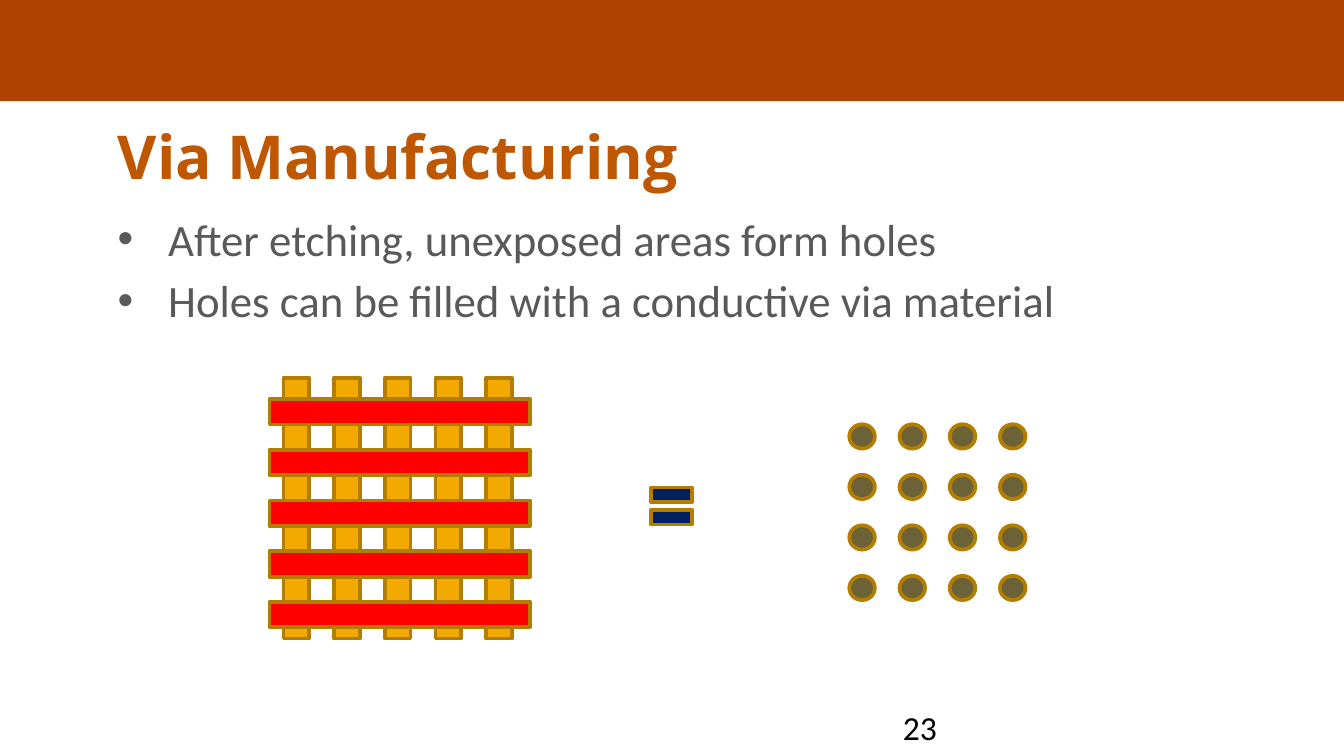
import pptx
import pptx.util
import pptx.dml.color
import pptx.enum.shapes
import pptx.enum.text
import pptx.oxml
import pptx.oxml.ns

Pt = pptx.util.Pt
SHAPE = pptx.enum.shapes.MSO_SHAPE
PITCH = 27.15
BAR = 13.7
OUTLINE = "B37D00"


def rgb(value):
    return pptx.dml.color.RGBColor.from_string(value)


def add_shape(s, kind, box, fill, line=None):
    sp = s.shapes.add_shape(kind, *map(Pt, box))
    sp.shadow.inherit = False
    sp.fill.solid()
    sp.fill.fore_color.rgb = rgb(fill)
    if line:
        sp.line.color.rgb = rgb(line)
        sp.line.width = Pt(2)
    else:
        sp.line.fill.background()
    return sp


def place(sp, box):
    sp.left, sp.top, sp.width, sp.height = map(Pt, box)


def format_text(sp, size, font, color, bold=False):
    tf = sp.text_frame
    tf.word_wrap = True
    tf.auto_size = pptx.enum.text.MSO_AUTO_SIZE.NONE
    tf.vertical_anchor = pptx.enum.text.MSO_ANCHOR.TOP
    for p in tf.paragraphs:
        p.alignment = pptx.enum.text.PP_ALIGN.LEFT
        for r in p.runs:
            r.font.size = Pt(size)
            r.font.name = font
            r.font.bold = bold
            r.font.color.rgb = rgb(color)


def add_title(s, box, text):
    sp = s.shapes.title
    place(sp, box)
    sp.text_frame.text = text
    sp.text_frame.margin_top = Pt(1.3)
    format_text(sp, 32.4, "Open Sans", "BF5700", True)


def add_bullets(s, box, lines):
    sp = s.shapes.add_textbox(*map(Pt, box))
    sp.text_frame.text = "\n".join(lines)
    ns = pptx.oxml.ns.nsdecls("a")
    for i, p in enumerate(sp.text_frame.paragraphs):
        pPr = p._p.get_or_add_pPr()
        pPr.set("marL", str(Pt(27)))
        pPr.set("indent", str(-Pt(27)))
        for xml in (f'<a:buClr {ns}><a:srgbClr val="595A5B"/></a:buClr>',
                    f'<a:buFont {ns} typeface="Arial"/>',
                    f'<a:buChar {ns} char="•"/>'):
            pPr.append(pptx.oxml.parse_xml(xml))
        if i:
            p.space_before = Pt(4)
    format_text(sp, 24, "Calibri", "595959")


def add_mesh(s, box, count=5):
    left, top, width, height = box
    for i in range(count):
        add_shape(s, SHAPE.RECTANGLE,
                  (left + 7.5 + i * PITCH, top, BAR, height), "F2A900", OUTLINE)
    for i in range(count):
        add_shape(s, SHAPE.RECTANGLE,
                  (left, top + 11.4 + i * PITCH, width, BAR), "FF0000", OUTLINE)


def add_vias(s, box, count=4):
    left, top, width, height = box
    dot_w, dot_h = 13.7, 13
    step_x = (width - dot_w) / (count - 1)
    step_y = (height - dot_h) / (count - 1)
    for row in range(count):
        for col in range(count):
            add_shape(s, SHAPE.OVAL,
                      (left + col * step_x, top + row * step_y, dot_w, dot_h),
                      "6C6238", OUTLINE)


def add_page_number(s, box, number):
    sp = s.shapes.add_textbox(*map(Pt, box))
    sp.text_frame.text = str(number)
    format_text(sp, 18, "Calibri", "000000")


def main():
    prs = pptx.Presentation()
    prs.slide_width, prs.slide_height = Pt(720), Pt(405)
    s = prs.slides.add_slide(prs.slide_layouts[5])
    add_shape(s, SHAPE.RECTANGLE, (0, -0.5, 720, 54.7), "B04304")
    add_title(s, (56, 62.6, 610, 41), "Via Manufacturing")
    add_bullets(s, (56, 109.8, 609, 270.7),
                ["After etching, unexposed areas form holes",
                 "Holes can be filled with a conductive via material"])
    add_mesh(s, (144.4, 202.4, 139.7, 139.7))
    add_shape(s, SHAPE.MATH_EQUAL, (345, 254.2, 29.5, 33.8), "002060", OUTLINE)
    add_vias(s, (455, 227.3, 94.4, 94.2))
    add_page_number(s, (476.6, 375.3, 126, 21.6), 23)
    prs.save("out.pptx")


if __name__ == "__main__":
    main()
